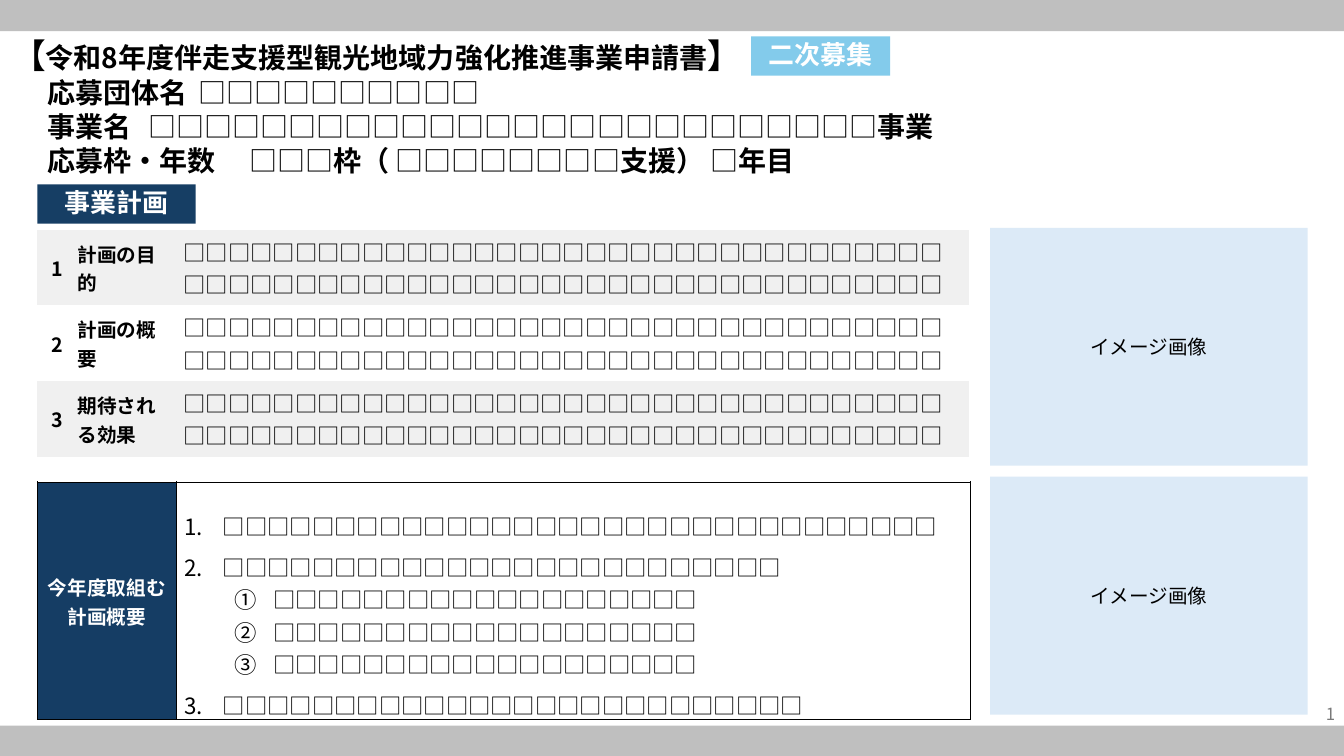
import dataclasses

import lxml.etree
import pptx
import pptx.dml.color
import pptx.enum.shapes
import pptx.enum.text
import pptx.oxml.ns
import pptx.util

Inches, Pt = pptx.util.Inches, pptx.util.Pt
ALIGN, ANCHOR = pptx.enum.text.PP_ALIGN, pptx.enum.text.MSO_ANCHOR
qn = pptx.oxml.ns.qn


@dataclasses.dataclass(frozen=True)
class Theme:
    face: str = "Noto Sans CJK JP"
    black: str = "000000"
    white: str = "FFFFFF"
    bar: str = "BFBFBF"
    band: str = "F0F0F0"
    navy: str = "153D64"
    tag: str = "163E64"
    sky: str = "83CBEB"
    pale: str = "DCEAF7"
    gray: str = "797979"
    mark: float = 24
    head: float = 20
    label: float = 18.5
    body: float = 16
    small: float = 14
    page: float = 12


T = Theme()


# Shared helpers
def apply(item, **values):
    for name, value in values.items():
        setattr(item, name, value)


def child(parent, tag, **attrs):
    return lxml.etree.SubElement(parent, qn(tag), attrs)


def paint(fill, color):
    if color:
        fill.solid()
        fill.fore_color.rgb = pptx.dml.color.RGBColor.from_string(color)
    else:
        fill.background()


def write(para, text, size, color=T.black, bold=False):
    run = para.add_run()
    run.text = text
    apply(run.font, name=T.face, size=Pt(size), bold=bold)
    paint(run.font.fill, color)
    child(run._r.get_or_add_rPr(), "a:ea", typeface=T.face)
    return run


def lines(frame, count):
    return [frame.paragraphs[0]] + [frame.add_paragraph() for _ in range(count - 1)]


def place(shape, box):
    for name, value in zip(("left", "top", "width", "height"), box):
        setattr(shape, name, Inches(value))


# Shapes
def block(slide, box, fill, text="", size=T.small, color=T.black, bold=False, space=None):
    kind = pptx.enum.shapes.MSO_SHAPE.RECTANGLE
    shape = slide.shapes.add_shape(kind, *map(Inches, box))
    shape.shadow.inherit = False
    paint(shape.fill, fill)
    shape.line.fill.background()
    if text:
        frame = shape.text_frame
        apply(frame, word_wrap=True, vertical_anchor=ANCHOR.MIDDLE)
        para = frame.paragraphs[0]
        apply(para, alignment=ALIGN.CENTER, line_spacing=space)
        write(para, text, size, color, bold)


# Title and applicant lines
def holder(shape, box):
    place(shape, box)
    apply(shape.text_frame, word_wrap=True, vertical_anchor=ANCHOR.TOP,
          auto_size=pptx.enum.text.MSO_AUTO_SIZE.NONE)
    return shape.text_frame


def title(slide):
    para = holder(slide.shapes.title, (0.02, 0.3, 7.7, 0.5)).paragraphs[0]
    para.alignment = ALIGN.LEFT
    name = "令和8年度伴走支援型観光地域力強化推進事業申請書"
    for text, size in (("【", T.mark), (name, T.head), ("】", T.mark)):
        write(para, text, size, bold=True)


def entry(slide):
    rows = [
        ["応募団体名\t", "□" * 10],
        ["事業名\t", "□" * 26, "事業"],
        ["応募枠・年数\t", "□" * 3, "枠（", " " + "□" * 8, "支援）", " □", "年目"],
    ]
    frame = holder(slide.placeholders[1], (0.37, 0.69, 12.6, 1.14))
    for para, row in zip(lines(frame, len(rows)), rows):
        props = para._p.get_or_add_pPr()
        apply_xml(props, marL="0", indent="0")
        child(props, "a:buNone")
        tabs = child(props, "a:tabLst")
        child(tabs, "a:tab", pos=str(Inches(2)), algn="l")
        apply(para, space_before=Pt(0), line_spacing=Pt(24.3))
        for i, text in enumerate(row):
            write(para, text, T.head, bold=i % 2 == 0)


def apply_xml(node, **attrs):
    for name, value in attrs.items():
        node.set(name, value)


# Tables
def grid(slide, box, widths, count):
    shape = slide.shapes.add_table(count, len(widths), *map(Inches, box))
    table = shape.table
    style = table._tbl.tblPr.find(qn("a:tableStyleId"))
    style.text = "{2D5ABB26-0587-4C30-8999-92F81FD0307C}"
    apply(table, first_row=False, horz_banding=False)
    for col, width in zip(table.columns, widths):
        col.width = Inches(width)
    return table


def setup(cell, fill, pads, anchor=ANCHOR.MIDDLE):
    paint(cell.fill, fill)
    cell.vertical_anchor = anchor
    names = ("margin_left", "margin_top", "margin_right", "margin_bottom")
    apply(cell, **dict(zip(names, map(Inches, pads))))


def border(cell):
    props = cell._tc.get_or_add_tcPr()
    for i, side in enumerate("LRTB"):
        edge = lxml.etree.Element(qn("a:ln" + side), w=str(Pt(0.5)))
        child(child(edge, "a:solidFill"), "a:srgbClr", val=T.black)
        props.insert(i, edge)


TIGHT = (0.01, 0.01, 0.01, 0)


def plan(slide):
    names = ("計画の目的", "計画の概要", "期待される効果")
    table = grid(slide, (0.37, 2.28, 9.25, 2.25), (0.39, 0.98, 7.87), len(names))
    for i, name in enumerate(names):
        texts = (str(i + 1), name, "□" * 68)
        for j, text in enumerate(texts):
            cell = table.cell(i, j)
            last = j == 2
            setup(cell, None if i % 2 else T.band,
                  (0.08, 0.04, 0.08, 0.04) if last else TIGHT)
            para = cell.text_frame.paragraphs[0]
            para.alignment = ALIGN.LEFT if j else ALIGN.CENTER
            write(para, text, T.body if last else T.small, bold=not last)


def tasks(slide):
    table = grid(slide, (0.37, 4.78, 9.25, 2.36), (1.38, 7.87), 1)
    head, body = table.cell(0, 0), table.cell(0, 1)
    setup(head, T.navy, TIGHT)
    setup(body, None, (0.08, 0.28, 0.08, 0), ANCHOR.TOP)
    border(head)
    border(body)

    names = ("今年度取組む", "計画概要")
    for para, text in zip(lines(head.text_frame, len(names)), names):
        para.alignment = ALIGN.CENTER
        write(para, text, T.small, T.white, True)

    # Numbered items: level and length
    items = ((0, 32), (0, 25), (1, 19), (1, 19), (1, 19), (0, 26))
    for i, para in enumerate(lines(body.text_frame, len(items))):
        level, count = items[i]
        para.level = level
        props = para._p.get_or_add_pPr()
        apply_xml(props, marL=str(Inches(0.38 + 0.5 * level)), indent=str(Inches(-0.38)))
        child(props, "a:buFont", typeface=T.face)
        child(props, "a:buAutoNum", type="circleNumDbPlain" if level else "arabicPeriod")
        para.space_before = Pt(6 if i and not level else 0)
        write(para, "□" * count, T.body)


# Slide number
def number(slide):
    frame = slide.shapes.add_textbox(*map(Inches, (10.34, 6.88, 3, 0.4))).text_frame
    apply(frame, word_wrap=True, vertical_anchor=ANCHOR.MIDDLE)
    para = frame.paragraphs[0]
    para.alignment = ALIGN.RIGHT
    run = write(para, "1", T.page, T.gray)._r
    field = lxml.etree.Element(qn("a:fld"), type="slidenum",
                               id="{B6F15528-21DE-4FAA-801E-634DDDAF4B2B}")
    para._p.replace(run, field)
    field.extend(list(run))


def main():
    deck = pptx.Presentation()
    apply(deck, slide_width=Inches(13.33), slide_height=Inches(7.5))
    slide = deck.slides.add_slide(deck.slide_layouts[1])
    for top in (0, 7.2):
        block(slide, (0, top, 13.33, 0.31 if top == 0 else 0.3), T.bar)
    title(slide)
    entry(slide)
    plan(slide)
    number(slide)
    tasks(slide)
    block(slide, (0.37, 1.83, 1.57, 0.39), T.tag, "事業計画", T.label, T.white, True, 0.9)
    block(slide, (7.45, 0.36, 1.38, 0.39), T.sky, "二次募集", T.label, T.white, True, 0.9)
    for top in (2.26, 4.73):
        block(slide, (9.82, top, 3.15, 2.36), T.pale, "イメージ画像")
    deck.save("out.pptx")


if __name__ == "__main__":
    main()
